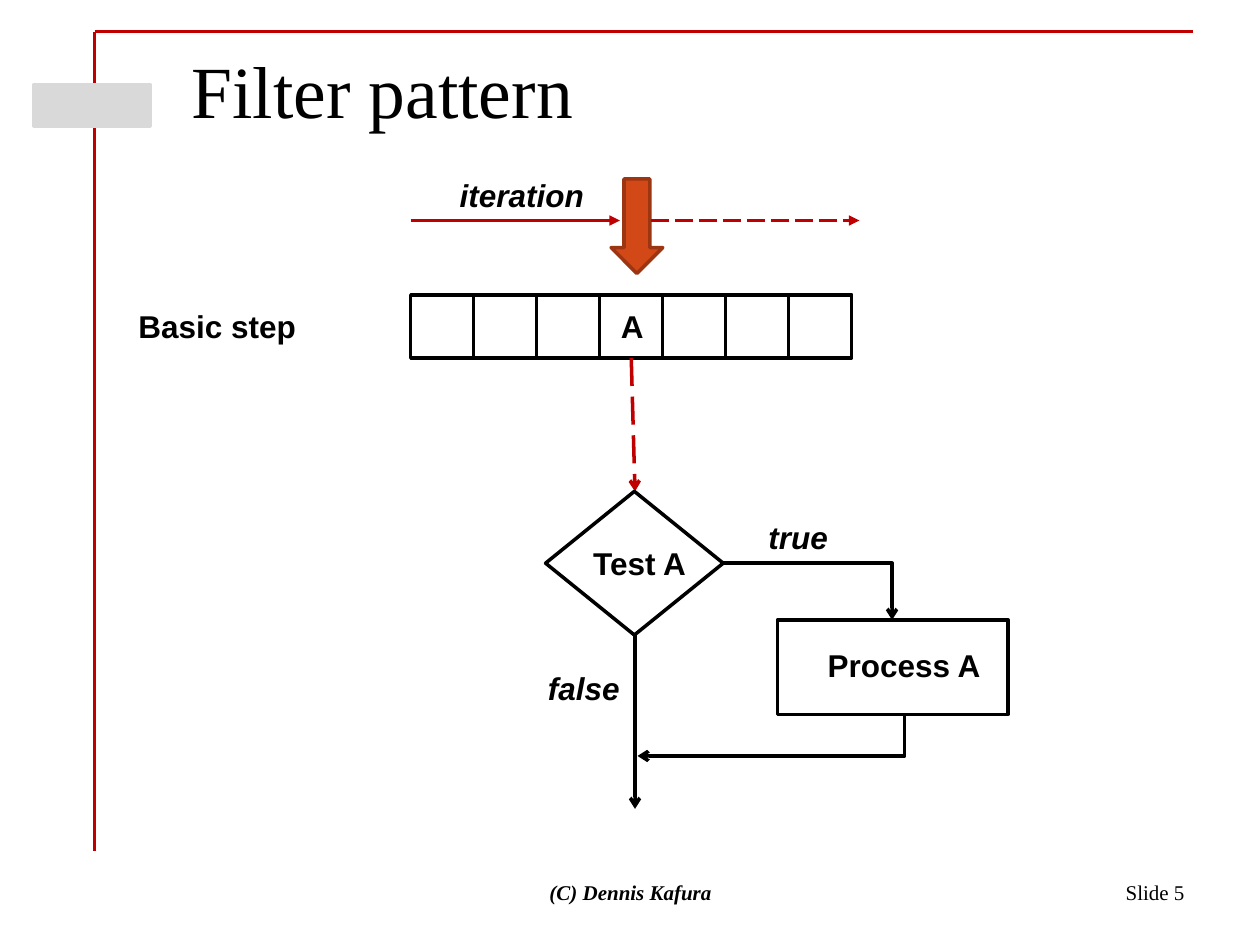
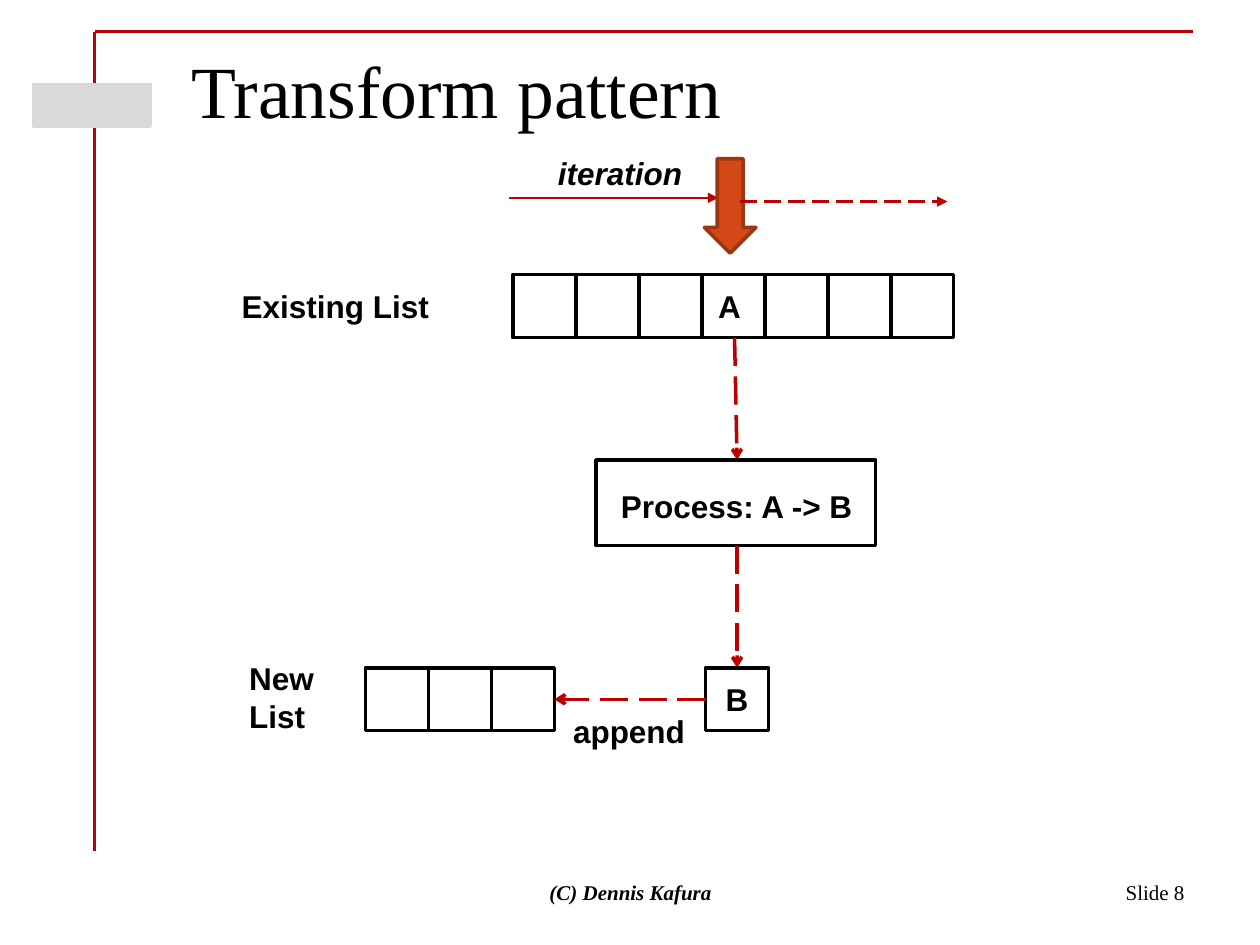
from lxml.etree import SubElement
from pptx import Presentation
from pptx.dml.color import RGBColor
from pptx.enum.dml import MSO_LINE
from pptx.enum.shapes import MSO_CONNECTOR, MSO_SHAPE
from pptx.enum.text import MSO_ANCHOR, MSO_AUTO_SIZE, PP_ALIGN
from pptx.oxml.ns import qn
from pptx.util import Inches, Pt

COLORS = {
    "ink": "000000",
    "red": "C00000",
    "badge": "D9D9D9",
    "pointer": "D34817",
    "pointer_edge": "9C3511",
}
SERIF = "Times New Roman"
LABEL = {"name": "Arial", "size": Pt(18), "bold": True, "italic": False}
ITALIC = LABEL | {"italic": True}
TITLE = {"name": SERIF, "size": Pt(42), "bold": False}
PAGE_NUMBER = {"name": SERIF, "size": Pt(12)}
COPYRIGHT = PAGE_NUMBER | {"bold": True, "italic": True}
FRAME_GROW = {"auto_size": MSO_AUTO_SIZE.SHAPE_TO_FIT_TEXT, "word_wrap": False}
FRAME_FIXED = {"vertical_anchor": MSO_ANCHOR.MIDDLE, "word_wrap": True}
CELL = 0.5


def color(name):
    return RGBColor.from_string(COLORS[name])


def apply(target, values):
    for name, value in values.items():
        setattr(target, name, value)


def add_span(para, text, style):
    span = para.add_run()
    span.text = text
    apply(span.font, style)
    span.font.color.rgb = color("ink")


def add_text(page, box, text, style, frame_style=FRAME_GROW, align=PP_ALIGN.LEFT):
    frame = page.shapes.add_textbox(*map(Inches, box)).text_frame
    apply(frame, frame_style)
    para = frame.paragraphs[0]
    para.alignment = align
    add_span(para, text, style)


def add_label(page, left, top, width, text, style=LABEL):
    add_text(page, (left, top, width, 0.4), text, style)


def add_shape(page, kind, box, fill=None, edge="ink"):
    shape = page.shapes.add_shape(kind, *map(Inches, box))
    shape.shadow.inherit = False
    if fill:
        shape.fill.solid()
        shape.fill.fore_color.rgb = color(fill)
    else:
        shape.fill.background()
    shape.line.color.rgb = color(edge)
    shape.line.width = Pt(2)


def add_line(page, start, end, color_name="red", width=2, dashed=False, head=None,
             kind=MSO_CONNECTOR.STRAIGHT):
    connector = page.shapes.add_connector(kind, *map(Inches, start + end))
    line = connector.line
    line.color.rgb = color(color_name)
    line.width = Pt(width)
    if dashed:
        line.dash_style = MSO_LINE.LONG_DASH
    properties = connector._element.spPr
    if head:
        SubElement(properties.find(qn("a:ln")), qn("a:tailEnd"), type=head)
    SubElement(properties, qn("a:effectLst"))
    return properties


def add_bend(page, start, end, down_first=False):
    if down_first:
        middle_x, middle_y = (start[0] + end[0]) / 2, (start[1] + end[1]) / 2
        half_x, half_y = abs(end[1] - start[1]) / 2, abs(end[0] - start[0]) / 2
        start = (middle_x - half_x, middle_y - half_y)
        end = (middle_x + half_x, middle_y + half_y)
    properties = add_line(page, start, end, "ink", head="arrow", kind=MSO_CONNECTOR.ELBOW)
    properties.find(qn("a:prstGeom")).set("prst", "bentConnector2")
    if down_first:
        properties.find(qn("a:xfrm")).set("rot", "5400000")


def add_dashed_arrow(page, start, end):
    add_line(page, start, end, dashed=True, head="arrow")


def add_cells(page, left, top, count):
    for index in range(count):
        add_shape(page, MSO_SHAPE.RECTANGLE, (left + index * CELL, top, CELL, CELL))


def add_iteration(page, left, top, pointer, rest):
    line_top = top + 0.4
    add_line(page, (left, line_top), (left + 1.66, line_top), width=1.25, head="triangle")
    add_label(page, left + 0.29, top, 1.2, "iteration", ITALIC)
    add_shape(page, MSO_SHAPE.DOWN_ARROW,
              (left + pointer[0], top + pointer[1], 0.41, 0.75), "pointer", "pointer_edge")
    rest_left, rest_top = left + rest[0], top + rest[1]
    add_line(page, (rest_left, rest_top), (rest_left + 1.65, rest_top),
             width=1.25, dashed=True, head="triangle")


def add_decision(page, left, top):
    middle, center = left + 0.71, top + 0.57
    process_left, process_top = left + 1.84, top + 1.02
    add_shape(page, MSO_SHAPE.DIAMOND, (left, top, 1.41, 1.14))
    add_shape(page, MSO_SHAPE.RECTANGLE, (process_left, process_top, 1.83, 0.75))
    add_label(page, left + 0.28, top + 0.37, 0.95, "Test A")
    add_label(page, process_left + 0.3, process_top + 0.16, 1.43, "Process A")
    add_label(page, left + 1.67, top + 0.16, 0.68, "true", ITALIC)
    add_label(page, left - 0.08, top + 1.36, 0.78, "false", ITALIC)
    add_bend(page, (left + 1.41, center), (process_left + 0.91, process_top))
    add_bend(page, (process_left + 1.01, process_top + 0.75), (middle + 0.02, top + 2.1), True)
    add_line(page, (middle, top + 1.14), (middle, top + 2.52), "ink", head="arrow")


def add_transformation(page, left, top):
    middle = left + 1.12
    result_left, result_top = left + 0.87, top + 1.65
    list_left = left - 1.83
    add_shape(page, MSO_SHAPE.RECTANGLE, (left, top, 2.22, 0.68))
    add_label(page, left + 0.1, top + 0.17, 2.06, "Process: A -> B")
    add_dashed_arrow(page, (middle, top + 0.68), (middle, result_top))
    add_cells(page, result_left, result_top, 1)
    add_label(page, result_left + 0.06, result_top + 0.05, 0.38, "B")
    add_cells(page, list_left, result_top, 3)
    add_text(page, (list_left - 1.02, result_top - 0.12, 0.77, 0.7),
             "New List", LABEL, FRAME_GROW | {"word_wrap": True})
    add_dashed_arrow(page, (result_left, result_top + CELL / 2),
                     (list_left + 3 * CELL, result_top + CELL / 2))
    add_label(page, left - 0.28, result_top + 0.3, 1.1, "append")


def add_frame(page, number):
    add_line(page, (0.75, 0.25), (9.47, 0.25))
    for top, bottom in ((0.25, 0.67), (1, 6.75)):
        add_line(page, (0.75, top), (0.75, bottom), width=1.75)
    add_shape(page, MSO_SHAPE.RECTANGLE, (0.27, 0.67, 0.92, 0.33), "badge", "badge")
    add_text(page, (7.17, 6.83, 2.33, 0.5), f"Slide {number}", PAGE_NUMBER,
             FRAME_FIXED, PP_ALIGN.RIGHT)
    add_text(page, (3.42, 6.83, 3.17, 0.5), "(C) Dennis Kafura", COPYRIGHT,
             FRAME_FIXED, PP_ALIGN.CENTER)


def add_page(deck, title_text, number):
    page = deck.slides.add_slide(deck.slide_layouts[5])
    title = page.shapes.title
    places = zip(("left", "top", "width", "height"), map(Inches, (1.42, 0.3, 8.08, 0.78)))
    apply(title, dict(places))
    apply(title.text_frame, {
        "auto_size": MSO_AUTO_SIZE.NONE,
        "vertical_anchor": MSO_ANCHOR.BOTTOM,
        "margin_left": Inches(0.1),
        "margin_bottom": Inches(0.02),
    })
    para = title.text_frame.paragraphs[0]
    para.alignment = PP_ALIGN.LEFT
    add_span(para, title_text, TITLE)
    add_frame(page, number)
    return page


def build_filter(deck):
    page = add_page(deck, "Filter pattern", 5)
    add_iteration(page, 3.26, 1.35, pointer=(1.59, 0.07), rest=(1.91, 0.4))
    add_cells(page, 3.26, 2.34, 7)
    add_label(page, 4.83, 2.39, 0.38, "A")
    add_label(page, 1, 2.39, 1.46, "Basic step")
    add_dashed_arrow(page, (5.01, 2.84), (5.04, 3.9))
    add_decision(page, 4.33, 3.9)


def build_transform(deck):
    page = add_page(deck, "Transform pattern", 8)
    add_iteration(page, 4.04, 1.17, pointer=(1.55, 0.09), rest=(1.83, 0.43))
    add_cells(page, 4.07, 2.18, 7)
    add_label(page, 5.6, 2.23, 0.38, "A")
    add_label(page, 1.82, 2.23, 1.7, "Existing List")
    add_dashed_arrow(page, (5.83, 2.68), (5.85, 3.65))
    add_transformation(page, 4.73, 3.65)


def main():
    deck = Presentation()
    deck.slide_width, deck.slide_height = Inches(10), Inches(7.5)
    build_filter(deck)
    build_transform(deck)
    deck.save("out.pptx")


if __name__ == "__main__":
    main()
